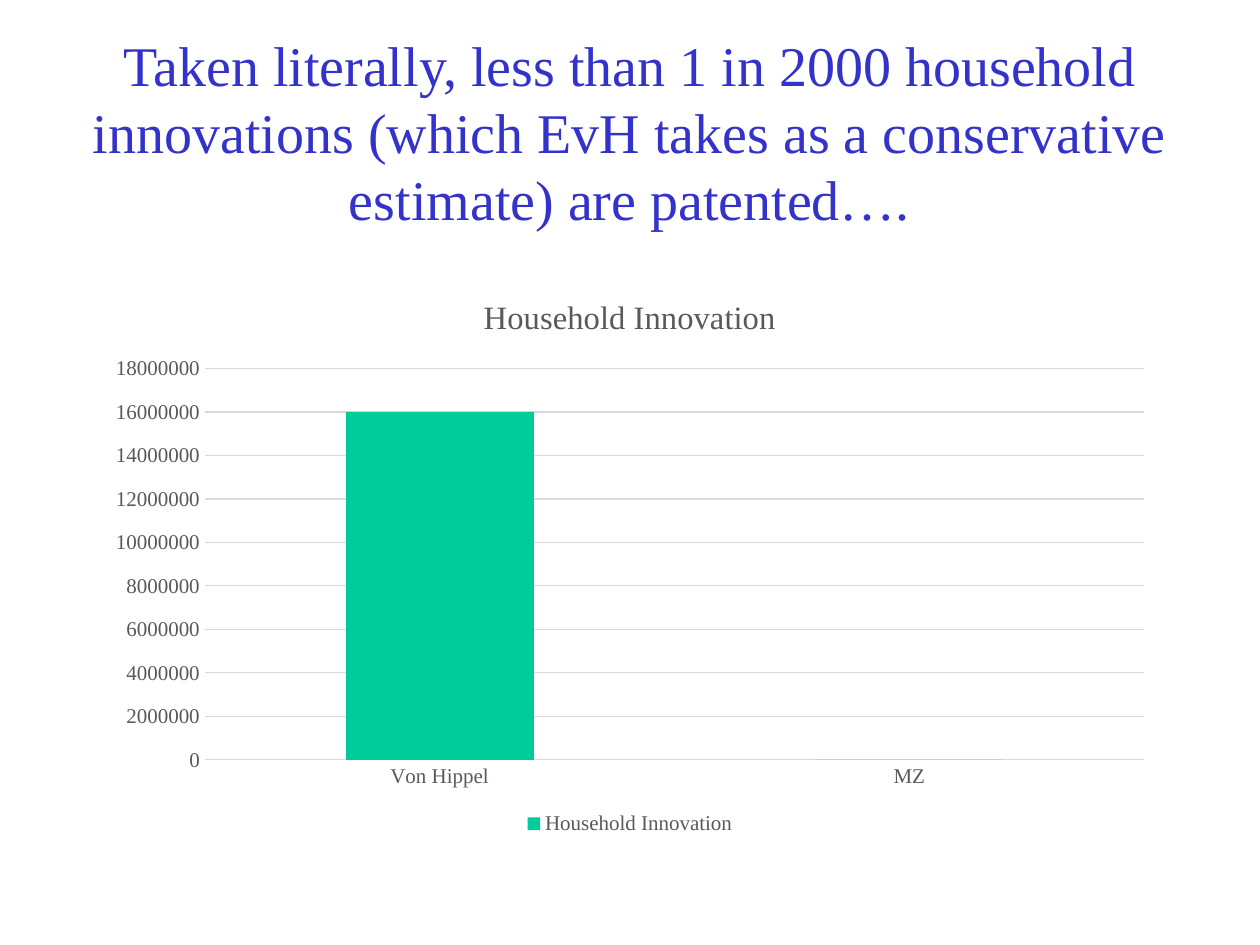
from dataclasses import dataclass

from pptx import Presentation
from pptx.chart.data import CategoryChartData
from pptx.dml.color import RGBColor
from pptx.enum.chart import XL_CHART_TYPE, XL_LEGEND_POSITION, XL_TICK_MARK
from pptx.enum.text import MSO_ANCHOR, MSO_AUTO_SIZE, PP_ALIGN
from pptx.util import Inches, Pt

STACKED = XL_CHART_TYPE.COLUMN_STACKED
BOTTOM = XL_LEGEND_POSITION.BOTTOM
NO_TICK = XL_TICK_MARK.NONE
MIDDLE = MSO_ANCHOR.MIDDLE
NO_AUTOFIT = MSO_AUTO_SIZE.NONE
CENTER = PP_ALIGN.CENTER
TITLE_ONLY = 5


@dataclass(frozen=True)
class Theme:
    font: str = "Times New Roman"
    title_color: str = "3333CC"
    label_color: str = "595959"
    grid_color: str = "D9D9D9"
    bar_color: str = "00CC99"
    title_size: float = 32
    chart_title_size: float = 18.6
    label_size: float = 12
    line_width: float = 0.75


class SlideBuilder:
    COLUMNS, ROWS = 40, 90

    def __init__(self, presentation, theme):
        self.theme = theme
        self.column = presentation.slide_width / self.COLUMNS
        self.row = presentation.slide_height / self.ROWS
        self.slide = presentation.slides.add_slide(presentation.slide_layouts[TITLE_ONLY])

    def box(self, left, top, width, height):
        return (round(left * self.column), round(top * self.row),
                round(width * self.column), round(height * self.row))

    def style_font(self, font, size, color):
        font.name = self.theme.font
        font.size = Pt(size)
        font.bold = False
        font.color.rgb = RGBColor.from_string(color)

    def style_line(self, line):
        line.color.rgb = RGBColor.from_string(self.theme.grid_color)
        line.width = Pt(self.theme.line_width)

    def title(self, text, *area):
        shape = self.slide.shapes.title
        shape.left, shape.top, shape.width, shape.height = self.box(*area)
        frame = shape.text_frame
        frame.text = text
        frame.word_wrap = True
        frame.auto_size = NO_AUTOFIT
        frame.vertical_anchor = MIDDLE
        paragraph = frame.paragraphs[0]
        paragraph.alignment = CENTER
        self.style_font(paragraph.font, self.theme.title_size, self.theme.title_color)

    def column_chart(self, name, values, *area):
        theme = self.theme
        data = CategoryChartData()
        data.categories = list(values)
        data.add_series(name, list(values.values()))
        chart = self.slide.shapes.add_chart(STACKED, *self.box(*area), data).chart
        self.style_font(chart.font, theme.label_size, theme.label_color)

        chart.has_title = True
        chart.chart_title.include_in_layout = False
        chart.chart_title.text_frame.text = name
        heading = chart.chart_title.text_frame.paragraphs[0]
        self.style_font(heading.font, theme.chart_title_size, theme.label_color)

        chart.has_legend = True
        chart.legend.position = BOTTOM
        chart.legend.include_in_layout = False
        self.style_font(chart.legend.font, theme.label_size, theme.label_color)

        for axis in (chart.category_axis, chart.value_axis):
            axis.major_tick_mark = NO_TICK
            axis.minor_tick_mark = NO_TICK
            self.style_font(axis.tick_labels.font, theme.label_size, theme.label_color)
        self.style_line(chart.category_axis.format.line)
        chart.value_axis.format.line.fill.background()
        chart.value_axis.has_major_gridlines = True
        self.style_line(chart.value_axis.major_gridlines.format.line)

        plot = chart.plots[0]
        plot.vary_by_categories = False
        plot.gap_width = 150
        plot.overlap = 100
        fill = plot.series[0].format.fill
        fill.solid()
        fill.fore_color.rgb = RGBColor.from_string(theme.bar_color)


def main():
    presentation = Presentation()
    presentation.slide_width = Inches(10)
    presentation.slide_height = Inches(7.5)
    builder = SlideBuilder(presentation, Theme())
    builder.title(
        "Taken literally, less than 1 in 2000 household innovations "
        "(which EvH takes as a conservative estimate) are patented….",
        0, 5, 40, 15)
    builder.column_chart(
        "Household Innovation", {"Von Hippel": 16000000, "MZ": 0},
        3, 26, 34, 54)
    presentation.save("out.pptx")


if __name__ == "__main__":
    main()
